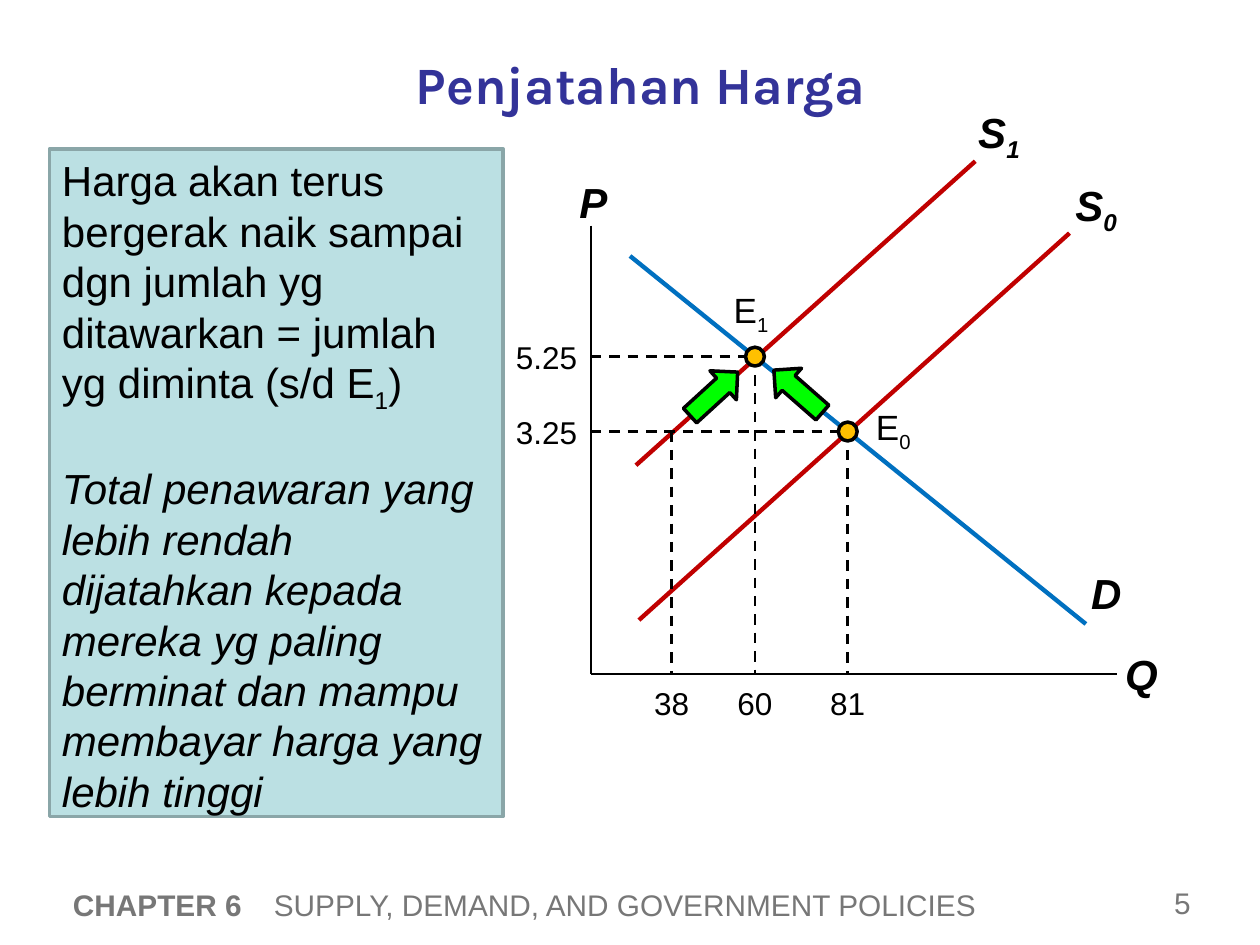
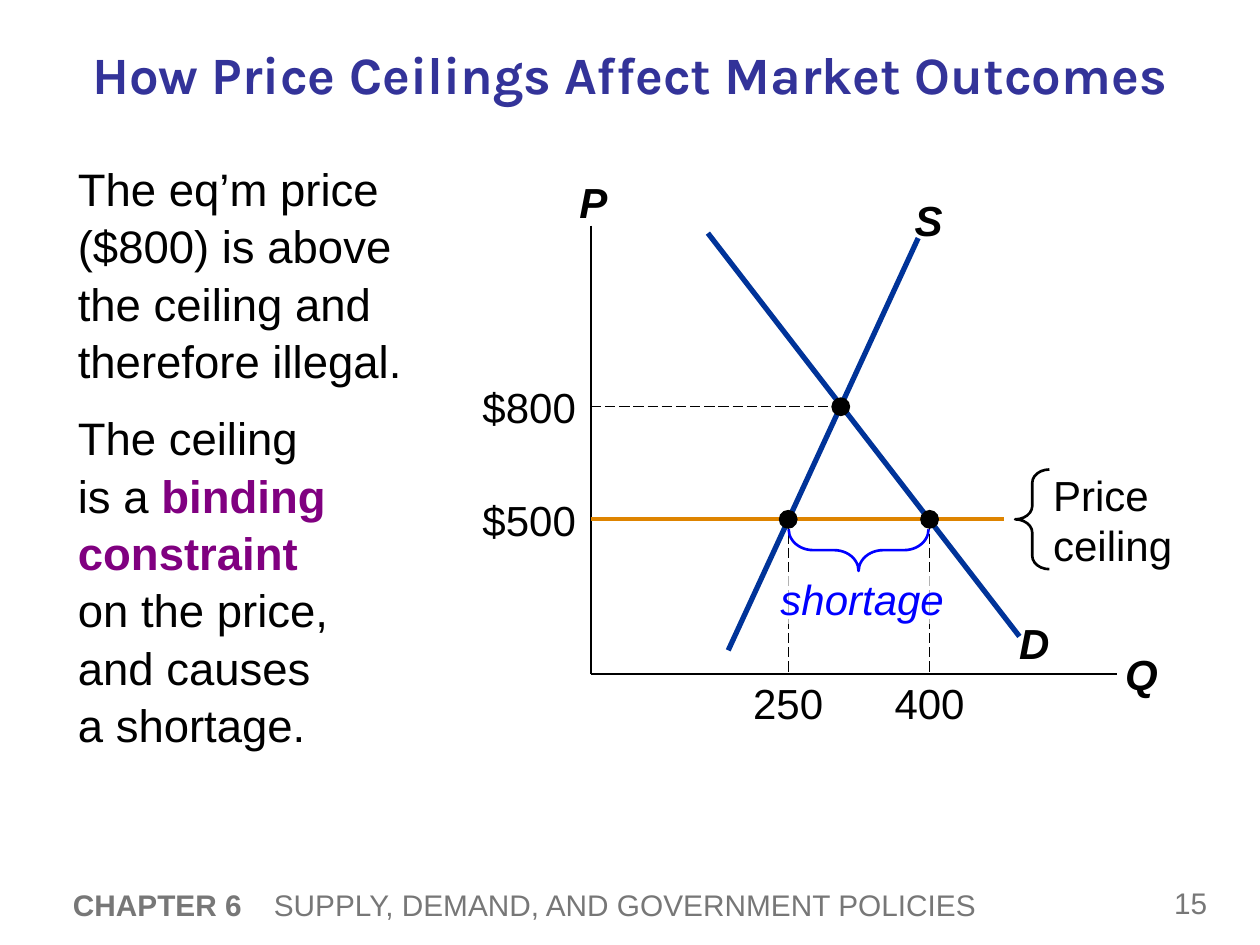
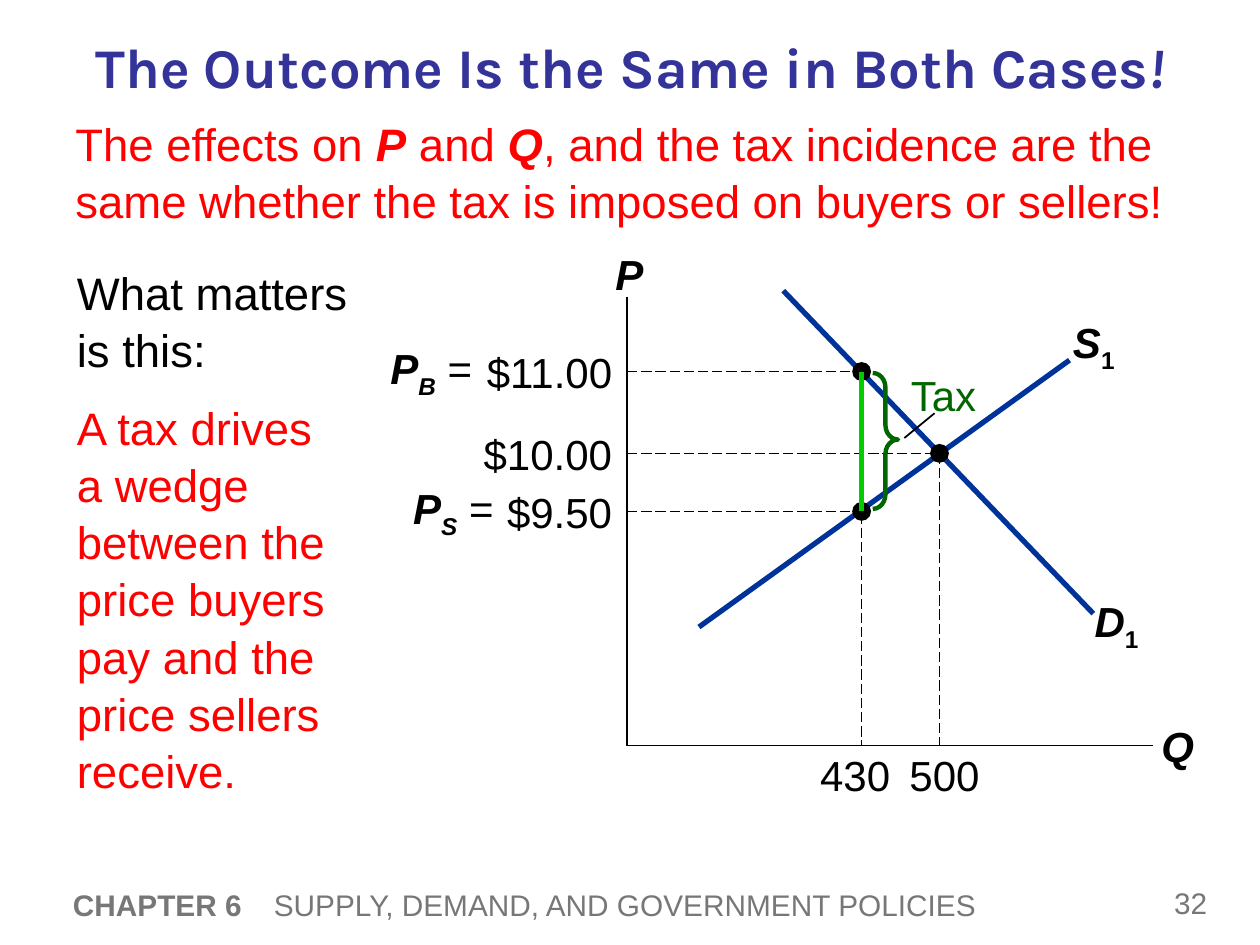
from dataclasses import dataclass

from lxml.etree import SubElement
from pptx import Presentation
from pptx.dml.color import RGBColor
from pptx.enum.dml import MSO_LINE
from pptx.enum.shapes import MSO_CONNECTOR, MSO_SHAPE
from pptx.enum.text import MSO_ANCHOR, PP_ALIGN
from pptx.oxml.ns import qn
from pptx.util import Cm, Pt

BLACK, WHITE, GREY, RED = "000000", "FFFFFF", "777777", "FF0000"
TITLE_BLUE, CURVE_BLUE, DEMAND_BLUE, BRACE_BLUE = "333399", "003399", "0070C0", "0000FF"
SUPPLY_RED, CEILING, PURPLE = "C00000", "DE8400", "800080"
TAX_GREEN, WEDGE_GREEN, ARROW_GREEN = "006600", "00CC00", "00FF00"
AMBER, PANEL, PANEL_EDGE = "FFC000", "BBE0E3", "8AA6A8"

ALIGNMENTS = {"left": PP_ALIGN.LEFT, "center": PP_ALIGN.CENTER, "right": PP_ALIGN.RIGHT}
ANCHOR_SHARE = {"left": 0, "center": 0.5, "right": 1}
PLOT_WIDTH, PLOT_HEIGHT = 10.6, 9.04
DOT_SIZE = 0.38
PRICE_EDGE, QUANTITY_DROP = -0.3, 0.58


@dataclass
class Box:
    """A rectangle in centimetres."""
    left: float
    top: float
    width: float
    height: float

    def inner(self, x, y, width, height, align="center"):
        """Return a box set at a point of this one, centred on it vertically."""
        left = self.left + x - width * ANCHOR_SHARE[align]
        return Box(left, self.top + y - height / 2, width, height)

    def lengths(self):
        """Return the four sides as slide lengths."""
        return [Cm(side) for side in (self.left, self.top, self.width, self.height)]


def color(value):
    """Turn a hex string into a colour."""
    return RGBColor.from_string(value)


def span(text, **style):
    """Pair a piece of text with its own format."""
    return text, style


def write(shape, paragraphs, size=24, ink=BLACK, font="Arial", bold=False, italic=False,
          align="left", middle=False, inset=None, line_spacing=None, gap=0, tab=None):
    """Fill a shape with paragraphs, each a string or a list of spans."""
    frame = shape.text_frame
    frame.word_wrap = True
    frame.vertical_anchor = MSO_ANCHOR.MIDDLE if middle else MSO_ANCHOR.TOP
    if inset is not None:
        frame.margin_left = frame.margin_right = Cm(inset)
        frame.margin_top = frame.margin_bottom = Cm(inset)
    base = {"bold": bold, "italic": italic, "ink": ink, "subscript": False}
    for index, pieces in enumerate(paragraphs):
        para = frame.add_paragraph() if index else frame.paragraphs[0]
        para.alignment = ALIGNMENTS[align]
        if line_spacing:
            para.line_spacing = line_spacing
        if index and gap:
            para.space_before = Pt(gap)
        if tab:
            stops = SubElement(para._p.get_or_add_pPr(), qn("a:tabLst"))
            SubElement(stops, qn("a:tab"), pos=str(Cm(tab)), algn="l")
        for text, style in [span(pieces)] if isinstance(pieces, str) else pieces:
            look = base | style
            for number, line in enumerate(text.split("\n")):
                if number:
                    para.add_line_break()
                if not line:
                    continue
                run = para.add_run()
                run.text = line
                run.font.name, run.font.size = font, Pt(size)
                run.font.bold, run.font.italic = look["bold"], look["italic"]
                run.font.color.rgb = color(look["ink"])
                if look["subscript"]:
                    run._r.get_or_add_rPr().set("baseline", "-25000")


def add_text(page, box, *paragraphs, **style):
    """Add a text box."""
    write(page.shapes.add_textbox(*box.lengths()), paragraphs, **style)


def add_figure(page, kind, box, fill=None, edge=None, weight=2, turn=0, adjust=(), alpha=None):
    """Add a preset shape without shadow."""
    shape = page.shapes.add_shape(kind, *box.lengths())
    shape.shadow.inherit = False
    shape.rotation = turn
    for index, value in enumerate(adjust):
        shape.adjustments[index] = value
    if fill:
        shape.fill.solid()
        shape.fill.fore_color.rgb = color(fill)
    else:
        shape.fill.background()
    if alpha:
        tint = shape._element.spPr.find(qn("a:solidFill")).find(qn("a:srgbClr"))
        SubElement(tint, qn("a:alpha"), val=str(alpha * 1000))
    if edge:
        shape.line.color.rgb = color(edge)
        shape.line.width = Pt(weight)
    else:
        shape.line.fill.background()
    return shape


def add_line(page, plot, start, end, ink=BLACK, weight=1, dash=None):
    """Draw a line between two points of the plot."""
    ends = [Cm(value) for x, y in (start, end) for value in (plot.left + x, plot.top + y)]
    line = page.shapes.add_connector(MSO_CONNECTOR.STRAIGHT, *ends)
    line.line.color.rgb = color(ink)
    line.line.width = Pt(weight)
    if dash:
        line.line.dash_style = dash
    SubElement(line._element.spPr, qn("a:effectLst"))


def add_label(page, plot, text, x, y, width=1.7, height=1.02, align="center", **style):
    """Set a label at a point of the plot."""
    box = plot.inner(x, y, width, height, align)
    add_text(page, box, text, align=align, middle=True, inset=0, **style)


def add_name(page, plot, letter, x, y, index="", slanted_index=True):
    """Name an axis or a curve in bold italics."""
    pieces = [span(letter), span(index, subscript=True, italic=slanted_index)]
    add_label(page, plot, pieces, x, y, bold=True, italic=True)


def add_axes(page, plot):
    """Draw the price and quantity axes."""
    add_line(page, plot, (0, 0), (0, plot.height))
    add_line(page, plot, (0, plot.height), (plot.width, plot.height))
    add_name(page, plot, "P", 0.05, -0.48)
    add_name(page, plot, "Q", plot.width + 0.5, plot.height)


def add_dot(page, plot, x, y, fill=BLACK, edge=None):
    """Mark a point of the plot."""
    add_figure(page, MSO_SHAPE.OVAL, plot.inner(x, y, DOT_SIZE, DOT_SIZE), fill, edge)


def add_price(page, plot, text, y):
    """Label a price to the left of its axis."""
    add_label(page, plot, text, PRICE_EDGE, y, width=2.8, align="right")


def add_quantity(page, plot, text, x, **style):
    """Label a quantity below its axis."""
    add_label(page, plot, text, x, plot.height + QUANTITY_DROP, **style)


def add_guides(page, plot, x, y, across=True, down=True, weight=0.75, dash=MSO_LINE.LONG_DASH):
    """Run dashed lines from a point to the axes."""
    if across:
        add_line(page, plot, (0, y), (x, y), weight=weight, dash=dash)
    if down:
        add_line(page, plot, (x, y), (x, plot.height), weight=weight, dash=dash)


def add_page(deck, title, title_box, number, size=30):
    """Add a page with title, footer and number."""
    page = deck.slides.add_slide(deck.slide_layouts[6])
    add_text(page, title_box, title, size=size, ink=TITLE_BLUE, font="Karla",
             bold=True, align="center", middle=True)
    footer = [span("CHAPTER 6", bold=True), span("\tSUPPLY, DEMAND, AND GOVERNMENT POLICIES")]
    add_text(page, Box(1.22, 17.68, 21.82, 1.12), footer, size=17, ink=GREY, middle=True, tab=4.05)
    add_text(page, Box(23.42, 17.68, 1.7, 1.04), str(number), size=17, ink=GREY, middle=True)
    return page


def add_body(page, box, *paragraphs, **style):
    """Add the running text of a page."""
    add_text(page, box, *paragraphs, size=26, line_spacing=1.05, gap=11.5, **style)


def draw_rationing(page, plot):
    """Plot the supply shift and the two equilibria."""
    add_axes(page, plot)
    add_line(page, plot, (0.79, 0.61), (9.98, 8.03), DEMAND_BLUE, 2.5)
    add_line(page, plot, (0.97, 7.95), (9.65, 0.15), SUPPLY_RED, 2.5)
    add_line(page, plot, (0.91, 4.83), (7.75, -1.3), SUPPLY_RED, 2.5)
    add_name(page, plot, "D", 10.39, 7.39)
    add_name(page, plot, "S", 10.19, -0.36, "0")
    add_name(page, plot, "S", 8.23, -1.83, "1")
    for x, y, turn in ((4.18, 3.34, 41.2), (2.48, 3.39, 137.6)):
        add_figure(page, MSO_SHAPE.LEFT_ARROW, plot.inner(x, y, 1.3, 0.79),
                   ARROW_GREEN, BLACK, turn=turn)
    heavy = {"weight": 1.5, "dash": MSO_LINE.DASH}
    add_guides(page, plot, 1.63, 4.15, across=False, **heavy)
    add_quantity(page, plot, "38", 1.63, size=18)
    equilibria = (
        (5.18, 4.15, "3.25", "81", "0", 6.1, 4.11),
        (3.31, 2.64, "5.25", "60", "1", 3.23, 1.75),
    )
    for x, y, price, quantity, index, name_x, name_y in equilibria:
        add_guides(page, plot, x, y, **heavy)
        add_dot(page, plot, x, y, AMBER, BLACK)
        add_label(page, plot, price, -0.89, y, size=18)
        add_quantity(page, plot, quantity, x, size=18)
        add_label(page, plot, [span("E"), span(index, subscript=True)], name_x, name_y, size=20)


def draw_ceiling(page, plot):
    """Plot the binding price ceiling and its shortage."""
    add_axes(page, plot)
    add_line(page, plot, (2.36, 0.15), (8.64, 8.28), CURVE_BLUE, 3)
    add_line(page, plot, (2.77, 8.56), (6.6, 0.25), CURVE_BLUE, 3)
    add_name(page, plot, "D", 8.94, 8.41)
    add_name(page, plot, "S", 6.81, -0.13)
    market, ceiling = 3.65, 5.92
    add_guides(page, plot, 5.04, market, down=False)
    add_dot(page, plot, 5.04, market)
    add_price(page, plot, "$800", market)
    add_line(page, plot, (0, ceiling), (8.33, ceiling), CEILING, 2.25)
    add_price(page, plot, "$500", ceiling)
    add_figure(page, MSO_SHAPE.LEFT_BRACE, plot.inner(8.9, ceiling, 0.69, 2.01),
               edge=BLACK, weight=1.5, adjust=(0.39, 0.5))
    add_label(page, plot, "Price\nceiling", 9.32, ceiling, width=2.8, height=2.03, align="left")
    for x, quantity in ((3.98, "250"), (6.83, "400")):
        add_guides(page, plot, x, ceiling, across=False)
        add_dot(page, plot, x, ceiling)
        add_quantity(page, plot, quantity, x)
    add_figure(page, MSO_SHAPE.LEFT_BRACE, plot.inner(5.4, 6.54, 0.84, 2.82),
               edge=BRACE_BLUE, weight=1.5, turn=270, adjust=(0.59, 0.5))
    veil = add_figure(page, MSO_SHAPE.RECTANGLE, plot.inner(5.47, 7.52, 3.43, 1.02),
                      WHITE, alpha=70)
    write(veil, ["shortage"], ink=BRACE_BLUE, italic=True, align="center", inset=0)


def draw_tax(page, plot):
    """Plot the tax wedge between buyers and sellers."""
    add_line(page, plot, (1.45, 6.65), (8.92, 1.27), CURVE_BLUE, 3)
    add_line(page, plot, (3.15, -0.13), (9.4, 6.38), CURVE_BLUE, 3)
    add_name(page, plot, "S", 9.41, 0.97, "1", slanted_index=False)
    add_name(page, plot, "D", 9.87, 6.6, "1", slanted_index=False)
    add_axes(page, plot)
    taxed, buyer, market, seller = 4.73, 1.5, 3.15, 4.32
    points = (
        (6.3, market, "$10.00", True),
        (taxed, buyer, "$11.00", True),
        (taxed, seller, "$9.50", False),
    )
    for x, y, price, down in points:
        add_guides(page, plot, x, y, down=down)
        add_dot(page, plot, x, y)
        add_price(page, plot, price, y)
    add_quantity(page, plot, "500", 6.4)
    add_quantity(page, plot, "430", 4.6)
    for index, edge, y in (("B", -3.12, buyer), ("S", -2.69, seller)):
        pieces = [span("P", bold=True, italic=True),
                  span(index, bold=True, italic=True, subscript=True), span(" =")]
        add_label(page, plot, pieces, edge, y, width=2.24, align="right")
    add_line(page, plot, (taxed, seller), (taxed, buyer), WEDGE_GREEN, 3)
    add_figure(page, MSO_SHAPE.RIGHT_BRACE, plot.inner(5.21, 2.9, 0.51, 2.74),
               edge=TAX_GREEN, weight=2.5, adjust=(0.57, 0.49))
    add_label(page, plot, "Tax", 7.04, 1.96, align="right", ink=TAX_GREEN)
    add_line(page, plot, (5.59, 2.84), (6.2, 2.34))


def build_rationing(deck):
    """Build the page on price rationing."""
    page = add_page(deck, "Penjatahan Harga", Box(1.27, 0.79, 23.29, 1.8), 5)
    panel = add_figure(page, MSO_SHAPE.RECTANGLE, Box(1, 3, 9.14, 13.46), PANEL, PANEL_EDGE)
    rise = [span("Harga akan terus bergerak naik sampai dgn jumlah yg ditawarkan = "
                 "jumlah yg diminta (s/d E"), span("1", subscript=True), span(")")]
    rationed = [span("Total penawaran yang lebih rendah dijatahkan kepada mereka yg paling "
                     "berminat dan mampu membayar harga yang lebih tinggi", italic=True)]
    write(panel, [rise, rationed], gap=28)
    draw_rationing(page, Box(11.91, 4.55, PLOT_WIDTH, PLOT_HEIGHT))


def build_ceiling(deck):
    """Build the page on price ceilings."""
    page = add_page(deck, "How Price Ceilings Affect Market Outcomes",
                    Box(0, 0.58, 25.4, 1.8), 15)
    add_body(page, Box(1.32, 3.07, 7.19, 12.65),
             "The eq’m price ($800) is above the ceiling and therefore illegal.",
             [span("The ceiling\nis a "), span("binding constraint", bold=True, ink=PURPLE),
              span("\non the price, and causes\na shortage.")])
    draw_ceiling(page, Box(11.91, 4.55, PLOT_WIDTH, PLOT_HEIGHT))


def build_tax(deck):
    """Build the page on tax incidence."""
    title = [span("The Outcome Is the Same in Both Cases"), span("!", italic=True)]
    page = add_page(deck, title, Box(0, 0.43, 25.4, 1.8), 32, size=32)
    add_body(page, Box(1.3, 5.16, 6.1, 11.2), "What matters is this:",
             [span("A tax drives\na wedge between the price buyers pay and the price "
                   "sellers receive.", ink=RED)])
    draw_tax(page, Box(12.64, 5.99, PLOT_WIDTH, PLOT_HEIGHT))
    effects = [span("The effects on "), span("P", bold=True, italic=True), span(" and "),
               span("Q", bold=True, italic=True),
               span(", and the tax incidence are the same whether the tax is imposed on "
                    "buyers or sellers!")]
    add_body(page, Box(1.27, 2.16, 23.32, 2.84), effects, ink=RED)


def main():
    """Build the deck and save it."""
    deck = Presentation()
    deck.slide_width, deck.slide_height = Cm(25.4), Cm(19.05)
    for build in (build_rationing, build_ceiling, build_tax):
        build(deck)
    deck.save("out.pptx")


if __name__ == "__main__":
    main()
